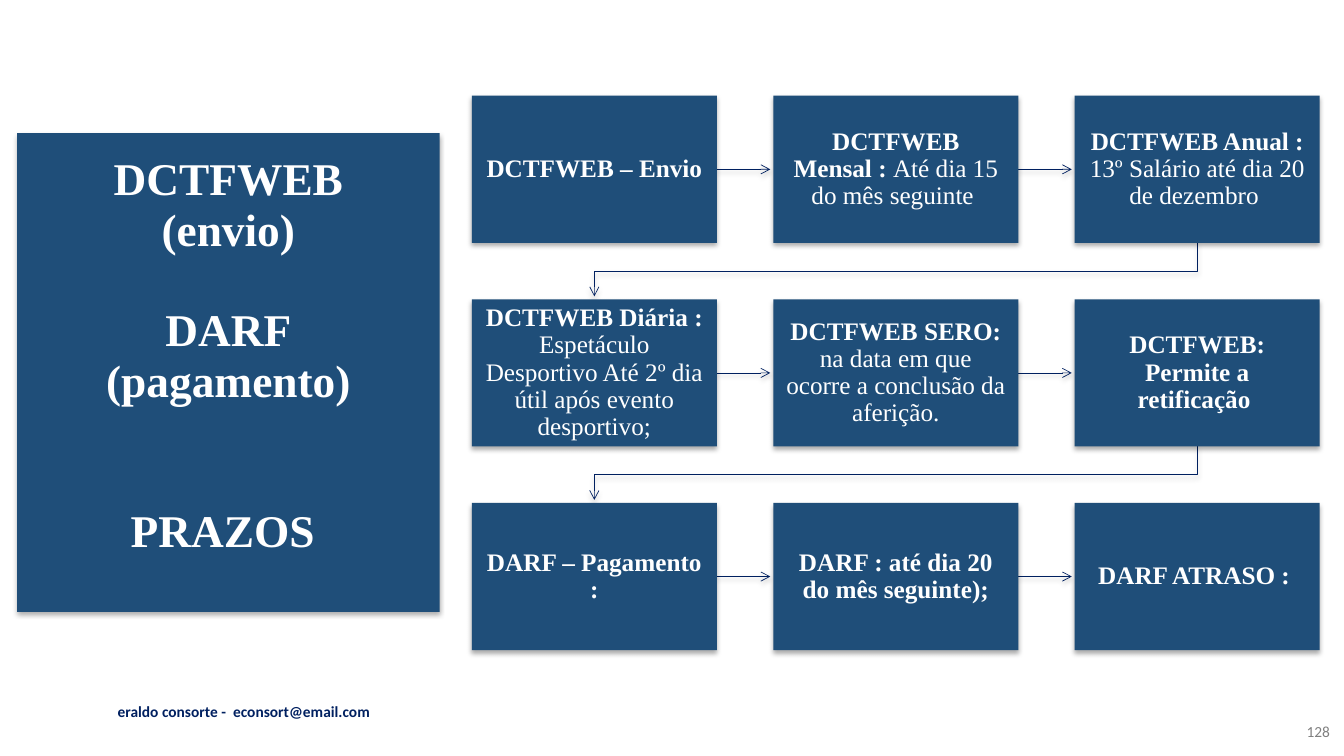
from dataclasses import dataclass

from pptx import Presentation
from pptx.dml.color import RGBColor
from pptx.enum.shapes import MSO_CONNECTOR, MSO_SHAPE
from pptx.enum.text import MSO_ANCHOR, MSO_AUTO_SIZE, PP_ALIGN
from pptx.oxml import parse_xml
from pptx.oxml.ns import nsdecls, qn
from pptx.util import Inches, Pt

RECTANGLE = MSO_SHAPE.RECTANGLE
STRAIGHT = MSO_CONNECTOR.STRAIGHT
CENTER, RIGHT = PP_ALIGN.CENTER, PP_ALIGN.RIGHT
MIDDLE, BOTTOM = MSO_ANCHOR.MIDDLE, MSO_ANCHOR.BOTTOM
NO_AUTOFIT = MSO_AUTO_SIZE.NONE


@dataclass(frozen=True)
class Theme:
    panel: RGBColor = RGBColor(0x1F, 0x4E, 0x79)
    ink: RGBColor = RGBColor(0x00, 0x20, 0x60)
    white: RGBColor = RGBColor(0xFF, 0xFF, 0xFF)
    gray: RGBColor = RGBColor(0x80, 0x80, 0x80)
    serif: str = "Times New Roman"
    sans: str = "Calibri"
    title_size: float = 32.4
    card_size: float = 18
    footer_size: float = 11


@dataclass(frozen=True)
class Grid:
    """Card grid, in inches."""
    left: float = 4.68
    top: float = 0.95
    column_step: float = 2.99
    row_step: float = 2.02
    card_width: float = 2.43
    card_height: float = 1.46
    arrow_gap: float = 0.03

    def corner(self, column, row):
        return self.left + column * self.column_step, self.top + row * self.row_step


# Deadlines by row: (bold lead, regular detail)
DEADLINES = [
    [("DCTFWEB – Envio ", ""),
     ("DCTFWEB Mensal : ", "Até dia 15 do mês seguinte "),
     ("DCTFWEB Anual : ", "13º Salário até dia 20 de dezembro ")],
    [("DCTFWEB Diária : ", "Espetáculo Desportivo Até 2º dia útil após evento desportivo;"),
     ("DCTFWEB SERO: ", "na data em que ocorre a conclusão da aferição."),
     ("DCTFWEB: Permite a retificação ", "")],
    [("DARF – Pagamento :", ""),
     ("DARF : até dia 20 do mês seguinte);", ""),
     ("DARF ATRASO : ", "")],
]
# Title blocks: (text, space before in points)
TITLE_BLOCKS = [("DCTFWEB\v(envio)", 0), ("DARF\v(pagamento)", 35), ("PRAZOS ", 70)]


class SlideBuilder:
    def __init__(self, slide, theme, grid):
        self.slide, self.theme, self.grid = slide, theme, grid

    def format_paragraph(self, paragraph, font_name, size, color, alignment=CENTER, bold=None):
        paragraph.alignment = alignment
        font = paragraph.font
        font.name, font.size, font.bold = font_name, Pt(size), bold
        font.color.rgb = color

    def add_shadow(self, shape):
        shape._element.spPr.append(parse_xml(
            f'<a:effectLst {nsdecls("a")}><a:outerShdw blurRad="44450" dist="27940" '
            'dir="5400000" algn="ctr" rotWithShape="0"><a:srgbClr val="000000">'
            '<a:alpha val="32000"/></a:srgbClr></a:outerShdw></a:effectLst>'))

    def style_panel(self, shape):
        shape.fill.solid()
        shape.fill.fore_color.rgb = self.theme.panel
        shape.line.fill.background()
        self.add_shadow(shape)

    def style_arrow(self, shape):
        shape.line.color.rgb = self.theme.ink
        shape.line.width = Pt(0.5)
        outline = shape._element.spPr.find(qn("a:ln"))
        outline.append(parse_xml(f'<a:tailEnd {nsdecls("a")} type="arrow"/>'))
        self.add_shadow(shape)

    def title(self, blocks, left, top, width, height):
        shape = self.slide.shapes.title
        shape.left, shape.top = Inches(left), Inches(top)
        shape.width, shape.height = Inches(width), Inches(height)
        self.style_panel(shape)
        frame = shape.text_frame
        frame.auto_size, frame.word_wrap = NO_AUTOFIT, True
        frame.vertical_anchor = BOTTOM
        frame.margin_bottom = Inches(0.54)
        for index, (text, space_before) in enumerate(blocks):
            paragraph = frame.add_paragraph() if index else frame.paragraphs[0]
            paragraph.text = text
            paragraph.line_spacing = 0.94
            paragraph.space_before = Pt(space_before)
            self.format_paragraph(paragraph, self.theme.serif, self.theme.title_size,
                                  self.theme.white, bold=True)

    def card(self, column, row, lead, detail):
        left, top = self.grid.corner(column, row)
        shape = self.slide.shapes.add_shape(
            RECTANGLE, Inches(left), Inches(top),
            Inches(self.grid.card_width), Inches(self.grid.card_height))
        self.style_panel(shape)
        frame = shape.text_frame
        frame.word_wrap, frame.vertical_anchor = True, MIDDLE
        frame.margin_left = frame.margin_right = Inches(0.12)
        frame.margin_top = frame.margin_bottom = Inches(0.13)
        paragraph = frame.paragraphs[0]
        paragraph.line_spacing = 0.9
        self.format_paragraph(paragraph, self.theme.serif, self.theme.card_size,
                              self.theme.white)
        for text, bold in ((lead, True), (detail, False)):
            if text:
                run = paragraph.add_run()
                run.text, run.font.bold = text, bold

    def arrow_to_next_column(self, column, row):
        left, top = self.grid.corner(column, row)
        next_left, _ = self.grid.corner(column + 1, row)
        middle = Inches(top + self.grid.card_height / 2)
        self.style_arrow(self.slide.shapes.add_connector(
            STRAIGHT, Inches(left + self.grid.card_width), middle,
            Inches(next_left - self.grid.arrow_gap), middle))

    def arrow_to_next_row(self, last_column, row):
        half_card = self.grid.card_width / 2
        left, top = self.grid.corner(last_column, row)
        next_left, next_top = self.grid.corner(0, row + 1)
        start_x, end_x = Inches(left + half_card), Inches(next_left + half_card)
        start_y = Inches(top + self.grid.card_height)
        bend_y = (start_y + Inches(next_top)) // 2
        builder = self.slide.shapes.build_freeform(start_x, start_y)
        builder.add_line_segments(
            [(start_x, bend_y), (end_x, bend_y),
             (end_x, Inches(next_top - self.grid.arrow_gap))], close=False)
        shape = builder.convert_to_shape()
        shape.fill.background()
        self.style_arrow(shape)

    def footer(self, text, left, top, width, color, alignment, bold):
        box = self.slide.shapes.add_textbox(
            Inches(left), Inches(top), Inches(width), Inches(0.4))
        frame = box.text_frame
        frame.word_wrap, frame.vertical_anchor = True, MIDDLE
        paragraph = frame.paragraphs[0]
        paragraph.text = text
        self.format_paragraph(paragraph, self.theme.sans, self.theme.footer_size,
                              color, alignment, bold)


def main():
    presentation = Presentation()
    presentation.slide_width, presentation.slide_height = Inches(13.33), Inches(7.5)
    slide = presentation.slides.add_slide(presentation.slide_layouts[5])
    theme = Theme()
    builder = SlideBuilder(slide, theme, Grid())

    # Title panel and footer
    builder.title(TITLE_BLOCKS, 0.17, 1.32, 4.19, 4.75)
    builder.footer("eraldo consorte -  econsort@email.com", 0.17, 6.86, 4.5,
                   theme.ink, CENTER, True)
    builder.footer("128", 12.8, 7.06, 0.49, theme.gray, RIGHT, False)

    # Deadline cards, each leading to the next
    for row, deadlines in enumerate(DEADLINES):
        last_column = len(deadlines) - 1
        for column, (lead, detail) in enumerate(deadlines):
            if column < last_column:
                builder.arrow_to_next_column(column, row)
            elif row < len(DEADLINES) - 1:
                builder.arrow_to_next_row(column, row)
            builder.card(column, row, lead, detail)

    presentation.save("out.pptx")


if __name__ == "__main__":
    main()
